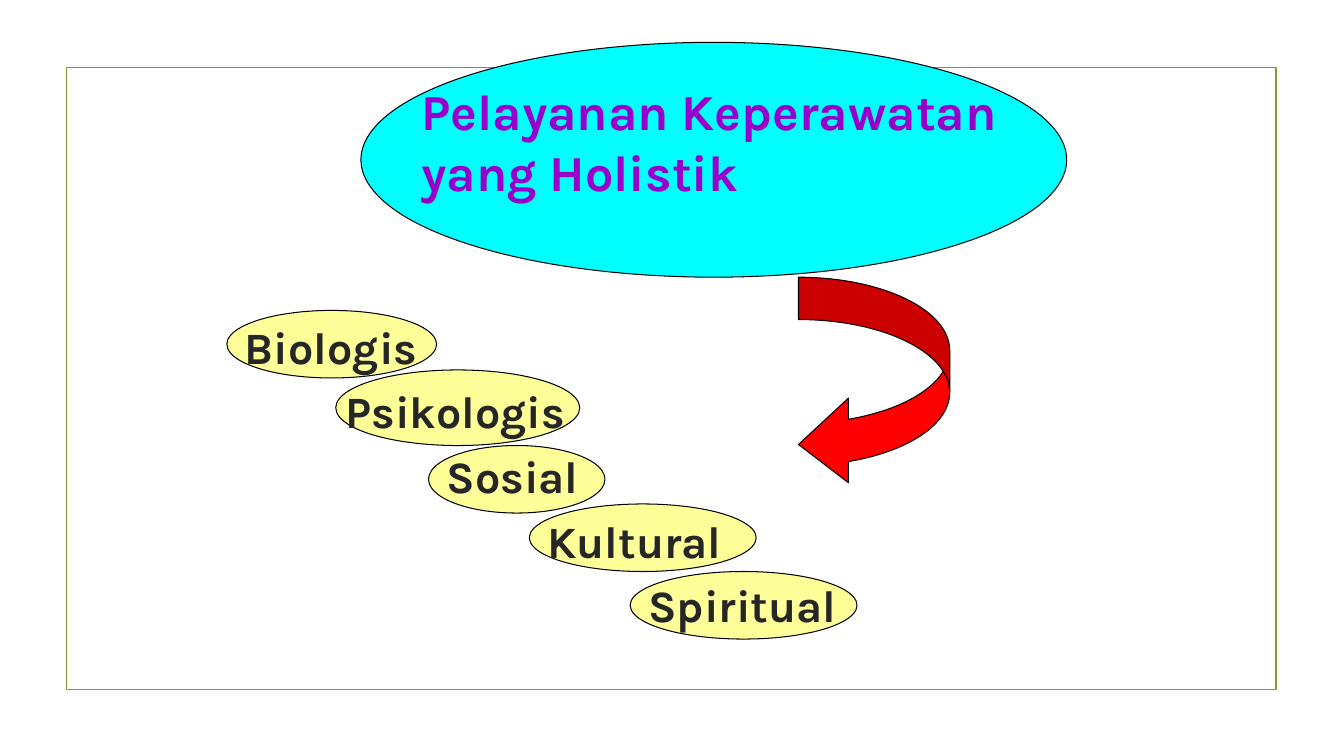
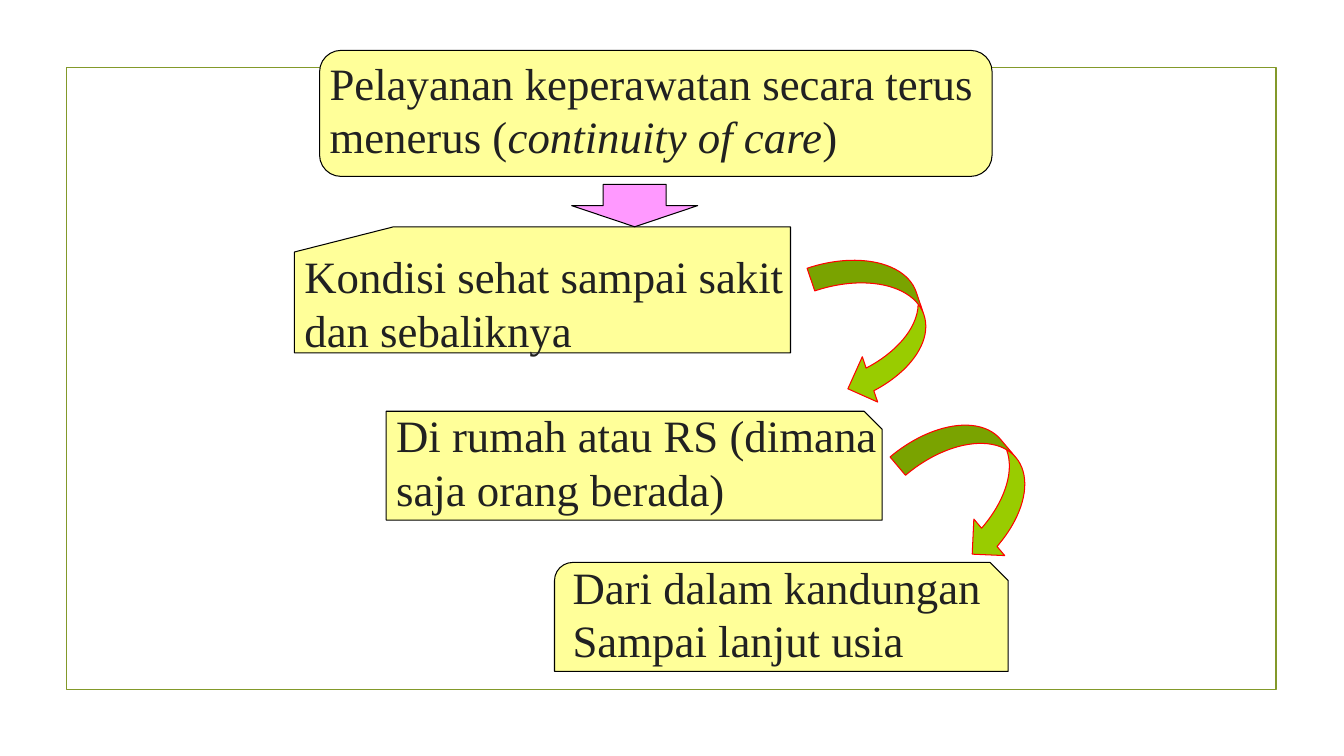
from dataclasses import dataclass
from typing import NamedTuple

from pptx import Presentation
from pptx.dml.color import RGBColor
from pptx.enum.shapes import MSO_SHAPE as SHAPE
from pptx.enum.text import MSO_ANCHOR as ANCHOR
from pptx.util import Inches, Pt


@dataclass(frozen=True)
class Theme:
    frame: str = "83992A"
    outline: str = "000000"
    card: str = "FFFF99"
    cyan: str = "00FFFF"
    purple: str = "9900CC"
    red: str = "FF0000"
    green: str = "99CC00"
    pink: str = "FF99FF"
    dark: str = "262626"
    body: str = "212121"
    sans: str = "Karla"
    serif: str = "Times New Roman"
    title_size: int = 36
    body_size: int = 32
    thin: float = 0.75
    frame_width: float = 1.25


T = Theme()


class Box(NamedTuple):
    x: float
    y: float
    w: float
    h: float


class Run(NamedTuple):
    text: str
    italic: bool = False


@dataclass(frozen=True)
class Figure:
    kind: SHAPE
    box: Box
    fill: str | None = T.card
    line: str = T.outline
    width: float = T.thin
    adj: tuple[float, ...] = ()
    rotation: float = 0


@dataclass(frozen=True)
class Label:
    box: Box
    paragraphs: list[list[Run]]
    font: dict
    anchor: ANCHOR = ANCHOR.TOP
    spacing: float = 1.0
    step: float = 0  # extra left indent of each further paragraph, in inches


HEADING = {"name": T.sans, "size": Pt(T.title_size), "bold": True, "color": T.purple}
ASPECT = {"name": T.sans, "size": Pt(T.body_size), "bold": True, "color": T.dark}
BODY = {"name": T.serif, "size": Pt(T.body_size), "color": T.body}


def draw_figure(s, fig: Figure) -> None:
    sp = s.shapes.add_shape(fig.kind, *map(Inches, fig.box))
    sp.shadow.inherit = False
    sp.rotation = fig.rotation
    for i, value in enumerate(fig.adj):
        sp.adjustments[i] = value
    if fig.fill:
        sp.fill.solid()
        sp.fill.fore_color.rgb = RGBColor.from_string(fig.fill)
    else:
        sp.fill.background()
    sp.line.color.rgb = RGBColor.from_string(fig.line)
    sp.line.width = Pt(fig.width)


def draw_label(s, label: Label) -> None:
    tf = s.shapes.add_textbox(*map(Inches, label.box)).text_frame
    tf.word_wrap = True
    tf.vertical_anchor = label.anchor
    for i, runs in enumerate(label.paragraphs):
        p = tf.paragraphs[0] if i == 0 else tf.add_paragraph()
        p.line_spacing = label.spacing
        if label.step:
            p._p.get_or_add_pPr().set("marL", str(Inches(i * label.step)))
        for run in runs:
            r = p.add_run()
            r.text = run.text
            r.font.italic = run.italic
            for key, value in label.font.items():
                if key == "color":
                    r.font.color.rgb = RGBColor.from_string(value)
                else:
                    setattr(r.font, key, value)


FRAME = Figure(SHAPE.RECTANGLE, Box(0.66, 0.67, 12, 6.17), None, T.frame, T.frame_width)


def add_slide(prs, figures: list[Figure], labels: list[Label]) -> None:
    s = prs.slides.add_slide(prs.slide_layouts[6])
    for fig in [FRAME, *figures]:
        draw_figure(s, fig)
    for label in labels:
        draw_label(s, label)


def holistic_care(prs) -> None:
    # Staircase of aspects, lowest step at the back
    aspects = {
        "Biologis": Box(2.25, 3.08, 2.08, 0.67),
        "Psikologis": Box(3.33, 3.67, 2.42, 0.75),
        "Sosial": Box(4.25, 4.42, 1.75, 0.67),
        "Kultural": Box(5.25, 5, 2.25, 0.67),
        "Spiritual": Box(6.25, 5.67, 2.25, 0.67),
    }
    ovals = [Figure(SHAPE.OVAL, box) for box in reversed(aspects.values())]
    heading = Figure(SHAPE.OVAL, Box(3.58, 0.42, 7, 2.33), T.cyan)
    arrow = Figure(SHAPE.CURVED_LEFT_ARROW, Box(7.92, 2.75, 1.5, 2.08), T.red,
                   adj=(0.28, 0.56, 0.33))
    add_slide(prs, [heading, *ovals, arrow], [
        Label(Box(2.33, 2.83, 8.58, 3.67), [[Run(name)] for name in aspects],
              ASPECT, ANCHOR.MIDDLE, spacing=1.2, step=1),
        Label(Box(4.08, 0.75, 6.72, 1.3),
              [[Run("Pelayanan Keperawatan yang Holistik")]], HEADING),
    ])


def continuity_of_care(prs) -> None:
    # Cards from the bottom up, then the arrows between them
    cards = [
        Figure(SHAPE.SNIP_ROUND_RECTANGLE, Box(5.5, 5.58, 4.5, 1.08)),
        Figure(SHAPE.SNIP_1_RECTANGLE, Box(3.83, 4.08, 4.92, 1.08)),
        Figure(SHAPE.FLOWCHART_CARD, Box(2.92, 2.25, 4.92, 1.25)),
        Figure(SHAPE.ROUNDED_RECTANGLE, Box(3.17, 0.5, 6.67, 1.25), adj=(0.17,)),
    ]
    curves = [
        Figure(SHAPE.CURVED_LEFT_ARROW, Box(x, y, 0.95, 1.5), T.green, T.red,
               adj=(0.25, 0.5, 0.25), rotation=angle)
        for x, y, angle in [(8.22, 2.47, 341.3), (9.2, 4.05, 319.8)]
    ]
    down = Figure(SHAPE.DOWN_ARROW, Box(5.67, 1.83, 1.25, 0.42), T.pink, adj=(0.5, 0.5))
    # Card texts
    texts = [
        (Box(3.17, 0.5, 6.67, 1.18),
         [[Run("Pelayanan keperawatan secara terus menerus ("),
           Run("continuity of care", italic=True), Run(")")]]),
        (Box(2.92, 2.42, 5.58, 1.18),
         [[Run("Kondisi sehat sampai sakit")], [Run("dan sebaliknya")]]),
        (Box(3.83, 4, 5.08, 1.18),
         [[Run("Di rumah atau RS (dimana saja orang berada)")]]),
        (Box(5.58, 5.5, 4.82, 1.18),
         [[Run("Dari dalam kandungan")], [Run("Sampai lanjut usia")]]),
    ]
    add_slide(prs, [*cards, *curves, down],
              [Label(box, paragraphs, BODY) for box, paragraphs in texts])


def main() -> None:
    prs = Presentation()
    prs.slide_width, prs.slide_height = Inches(13.33), Inches(7.5)
    holistic_care(prs)
    continuity_of_care(prs)
    prs.save("out.pptx")


if __name__ == "__main__":
    main()
